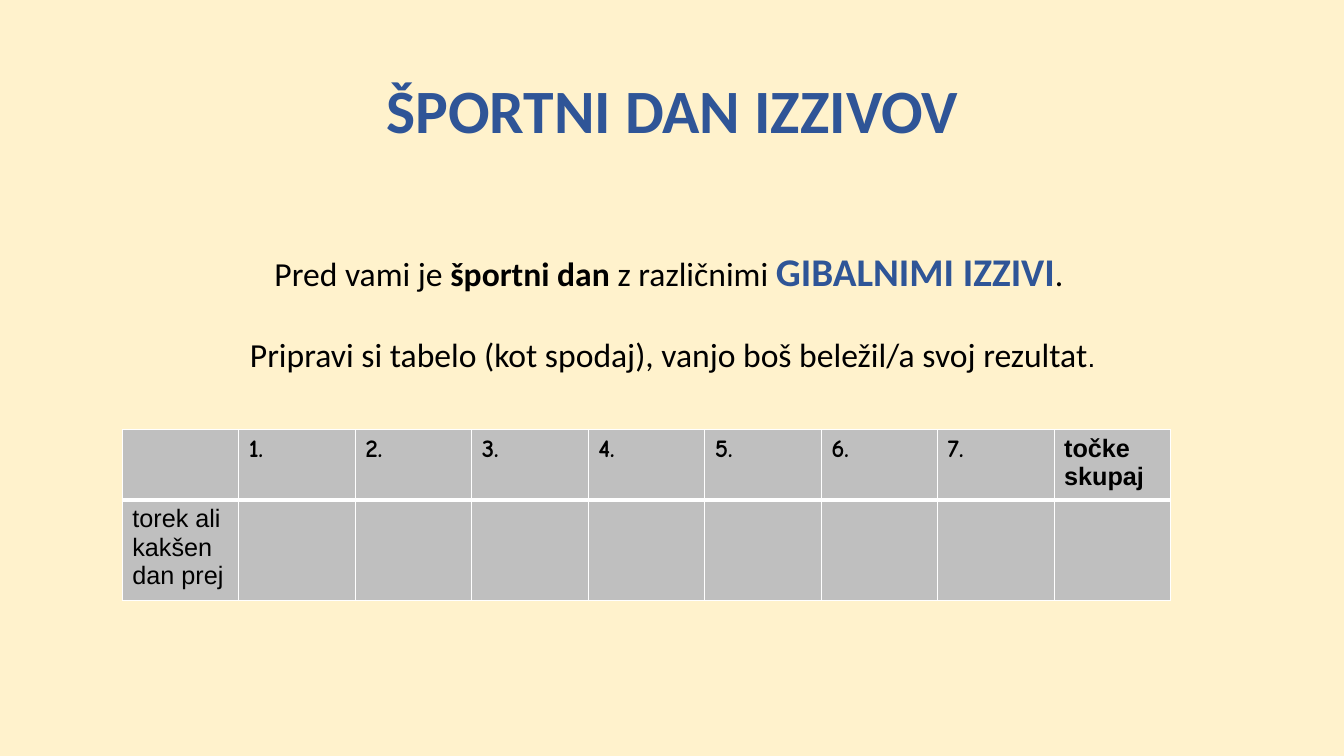
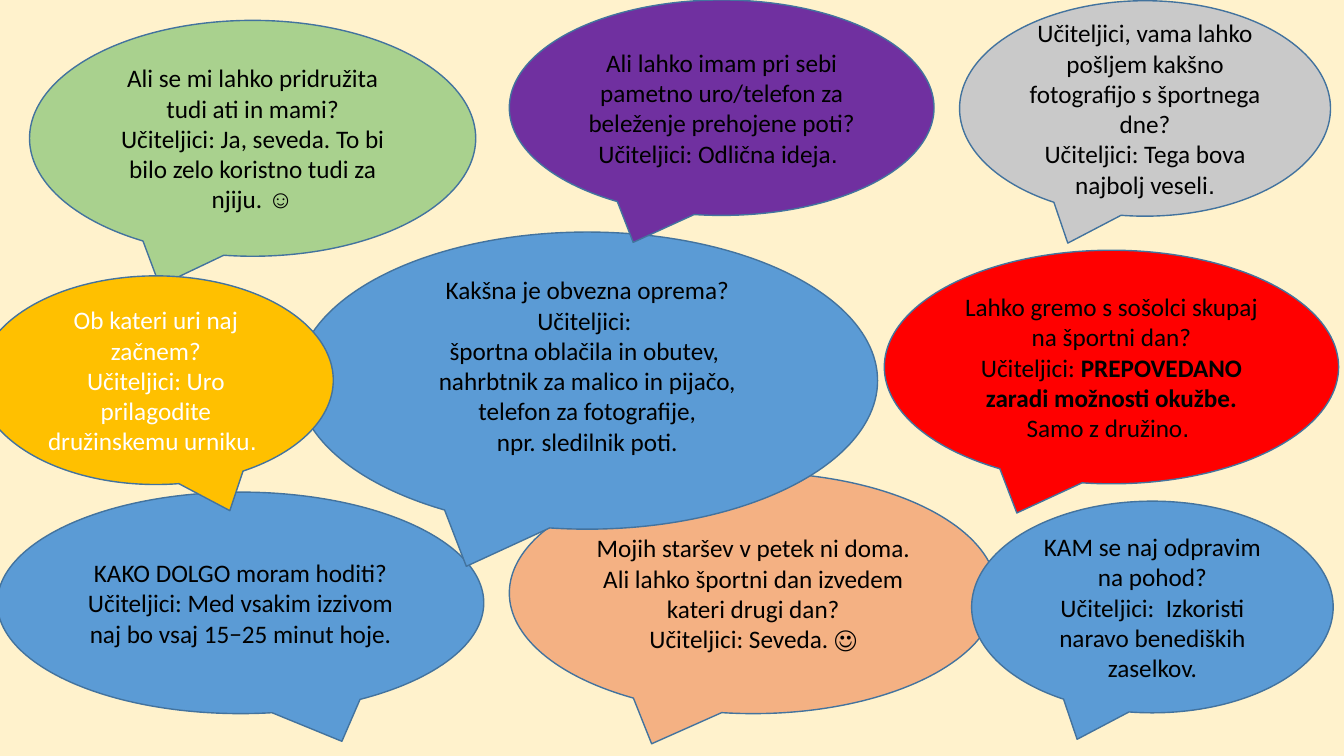
from lxml.etree import SubElement
from pptx import Presentation
from pptx.dml.color import RGBColor
from pptx.enum.shapes import MSO_SHAPE
from pptx.enum.text import MSO_ANCHOR, PP_ALIGN
from pptx.oxml.ns import qn
from pptx.util import Inches, Pt

WIDTH, HEIGHT = Inches(13.333), Inches(7.5)

# Shared look
CREAM, NAVY, BLACK, WHITE = "FFF2CC", "2F5597", "000000", "FFFFFF"
GREY, OUTLINE, BLUE = "BFBFBF", "43739E", "5B9BD5"
BODY_FONT, PLAIN_FONT, NUMBER_FONT = "Calibri", "Arial", "Comic Neue"
TAIL_LEFT, TAIL_RIGHT = -0.20833, 0.20833

# Spans that recur in the texts
STOP = (".", {"name": PLAIN_FONT})
STOP_SPACE = (". ", {"name": PLAIN_FONT})

# Place in percent of the slide (left, top, width, height), fill, paragraphs, options
CALLOUTS = [
    ((2.2, 2.7, 33.2, 31.2), "A9D18E",
     ["Ali se mi lahko pridružita tudi ati in mami?",
      ["Učiteljici: Ja, seveda. To bi bilo zelo koristno tudi za njiju. ",
       ("☺", {"name": PLAIN_FONT})]], {}),
    ((-0.2, 65.1, 36.2, 29.3), BLUE,
     ["KAKO DOLGO moram hoditi?",
      "Učiteljici: Med vsakim izzivom naj bo vsaj 15−25 minut hoje."],
     {"tail": TAIL_RIGHT}),
    ((37.9, 62.5, 36.3, 31.9), "F4B183",
     ["Mojih staršev v petek ni doma. Ali lahko športni dan izvedem kateri drugi dan?",
      "Učiteljici: Seveda. ☺"], {}),
    ((71.4, 0.1, 27.6, 28.5), "C9C9C9",
     ["Učiteljici, vama lahko pošljem kakšno fotografijo s športnega dne?",
      ["Učiteljici: Tega bova najbolj veseli", STOP]], {}),
    ((22.1, 30.7, 43.2, 39.3), BLUE,
     ["Kakšna je obvezna oprema?",
      "Učiteljici: ",
      "športna oblačila in obutev, ",
      "nahrbtnik za malico in pijačo,",
      "telefon za fotografije,",
      "npr. sledilnik poti."], {"bottom": 0.35}),
    ((37.9, 0, 31.6, 28.5), "7030A0",
     ["Ali lahko imam pri sebi pametno uro/telefon za beleženje prehojene poti?",
      ["Učiteljici: Odlična ideja", STOP_SPACE]], {}),
    ((65.8, 33.1, 33.8, 30.9), "FF0000",
     ["Lahko gremo s sošolci skupaj na športni dan?",
      ["Učiteljici: ", ("PREPOVEDANO zaradi možnosti okužbe. ", {"bold": True}),
       "Samo z družino", STOP_SPACE]], {}),
    ((-1.6, 36.5, 26.4, 27.6), "FFC000",
     ["Ob kateri uri naj začnem?",
      ["Učiteljici: Uro prilagodite družinskemu urniku", STOP_SPACE]],
     {"tail": TAIL_RIGHT, "color": WHITE}),
    ((72.3, 66.3, 26.9, 28), BLUE,
     ["KAM se naj odpravim na pohod?",
      "Učiteljici:  Izkoristi naravo benediških zaselkov."], {}),
]


def rgb(value):
    return RGBColor.from_string(value)


def place(left, top, width, height):
    """Turn percentages of the slide into lengths."""
    return [int(share * size / 100) for share, size in
            ((left, WIDTH), (top, HEIGHT), (width, WIDTH), (height, HEIGHT))]


def style(font, name=None, size=None, color=None, bold=None):
    if name:
        font.name = name
    if size:
        font.size = Pt(size)
    if color:
        font.color.rgb = rgb(color)
    if bold is not None:
        font.bold = bold


def write(frame, paragraphs, align=PP_ALIGN.CENTER, **look):
    """Each paragraph is a string or a list of strings and (text, look) spans."""
    frame.word_wrap = True
    for index, spans in enumerate(paragraphs):
        para = frame.add_paragraph() if index else frame.paragraphs[0]
        para.alignment = align
        style(para.font, **look)
        for span in [spans] if isinstance(spans, str) else spans:
            text, change = (span, {}) if isinstance(span, str) else span
            run = para.add_run()
            run.text = text
            style(run.font, **change)


def add_text(page, area, paragraphs, **look):
    frame = page.shapes.add_textbox(*place(*area)).text_frame
    write(frame, paragraphs, **look)
    return frame


def add_callout(page, area, fill, paragraphs, tail=TAIL_LEFT, color=BLACK, bottom=0.05):
    bubble = page.shapes.add_shape(MSO_SHAPE.OVAL_CALLOUT, *place(*area))
    bubble.shadow.inherit = False
    bubble.adjustments[0] = tail
    bubble.adjustments[1] = 0.625
    bubble.fill.solid()
    bubble.fill.fore_color.rgb = rgb(fill)
    bubble.line.color.rgb = rgb(OUTLINE)
    bubble.line.width = Pt(1)
    frame = bubble.text_frame
    frame.vertical_anchor = MSO_ANCHOR.MIDDLE
    frame.margin_bottom = Inches(bottom)
    write(frame, paragraphs, name=BODY_FONT, size=18, color=color)


def set_borders(cell, **widths):
    properties = cell._tc.get_or_add_tcPr()
    for side in ("L", "R", "T", "B"):
        line = SubElement(properties, qn(f"a:ln{side}"), w=str(Pt(widths.get(side, 1))))
        SubElement(SubElement(line, qn("a:solidFill")), qn("a:srgbClr"), val=WHITE)


def add_score_table(page):
    header = ["", *(f"{number}." for number in range(1, 8)), "točke skupaj"]
    rows = [header, ["torek ali kakšen dan prej"] + [""] * (len(header) - 1)]
    table = page.shapes.add_table(
        len(rows), len(header), *place(9.1, 56.8, 78, 20.8)).table
    for row, height in zip(table.rows, (0.64, 0.92)):
        row.height = Inches(height)
    for row_index, texts in enumerate(rows):
        for column, text in enumerate(texts):
            cell = table.cell(row_index, column)
            set_borders(cell, **({"T": 3} if row_index else {"B": 3}))
            cell.fill.solid()
            cell.fill.fore_color.rgb = rgb(GREY)
            if text:
                font = NUMBER_FONT if text[0].isdigit() else PLAIN_FONT
                write(cell.text_frame, [text], align=PP_ALIGN.LEFT, name=font,
                      size=18, color=BLACK, bold=row_index == 0)


def build_intro(page):
    # Title
    title = add_text(page, (6.9, 5.3, 86.3, 19.3), ["ŠPORTNI DAN IZZIVOV"],
                     name=BODY_FONT, size=44, color=NAVY, bold=True)
    title.vertical_anchor = MSO_ANCHOR.MIDDLE
    title.paragraphs[0].line_spacing = 0.9
    # Introduction
    intro = add_text(page, (6.9, 32.1, 86.3, 20), [
        ["Pred vami je ", ("športni dan", {"bold": True}), " z različnimi ",
         ("GIBALNIMI IZZIVI", {"size": 28, "color": NAVY, "bold": True}), ". "],
        ["Pripravi si tabelo (kot spodaj), vanjo boš beležil/a svoj rezultat",
         (".", {"name": PLAIN_FONT, "size": 20})],
    ], name=BODY_FONT, size=24, color=BLACK)
    intro.paragraphs[1].space_before = Pt(28)
    add_score_table(page)


def build_questions(page):
    for area, fill, paragraphs, options in CALLOUTS:
        add_callout(page, area, fill, paragraphs, **options)


def main():
    deck = Presentation()
    deck.slide_width, deck.slide_height = WIDTH, HEIGHT
    # One background for all slides
    backdrop = deck.slide_master.background.fill
    backdrop.solid()
    backdrop.fore_color.rgb = rgb(CREAM)
    for build in (build_intro, build_questions):
        build(deck.slides.add_slide(deck.slide_layouts[6]))
    deck.save("out.pptx")


if __name__ == "__main__":
    main()
